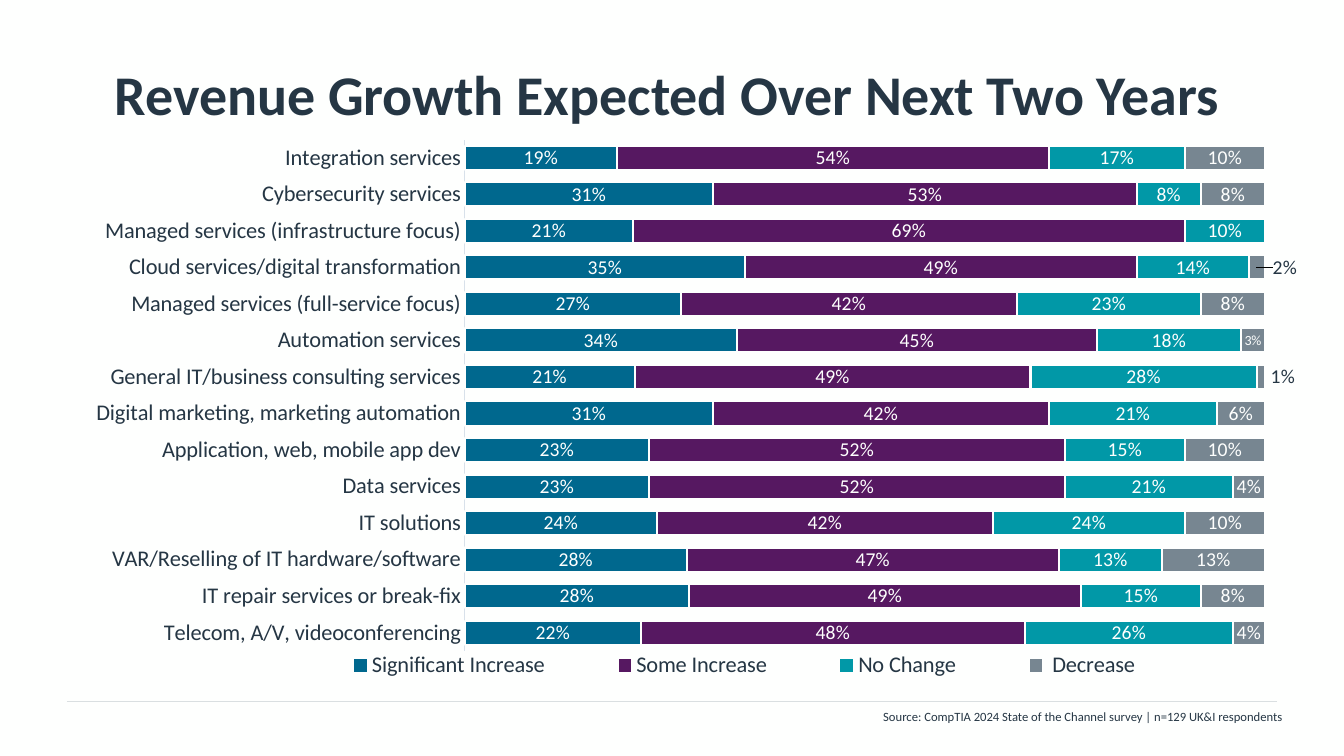
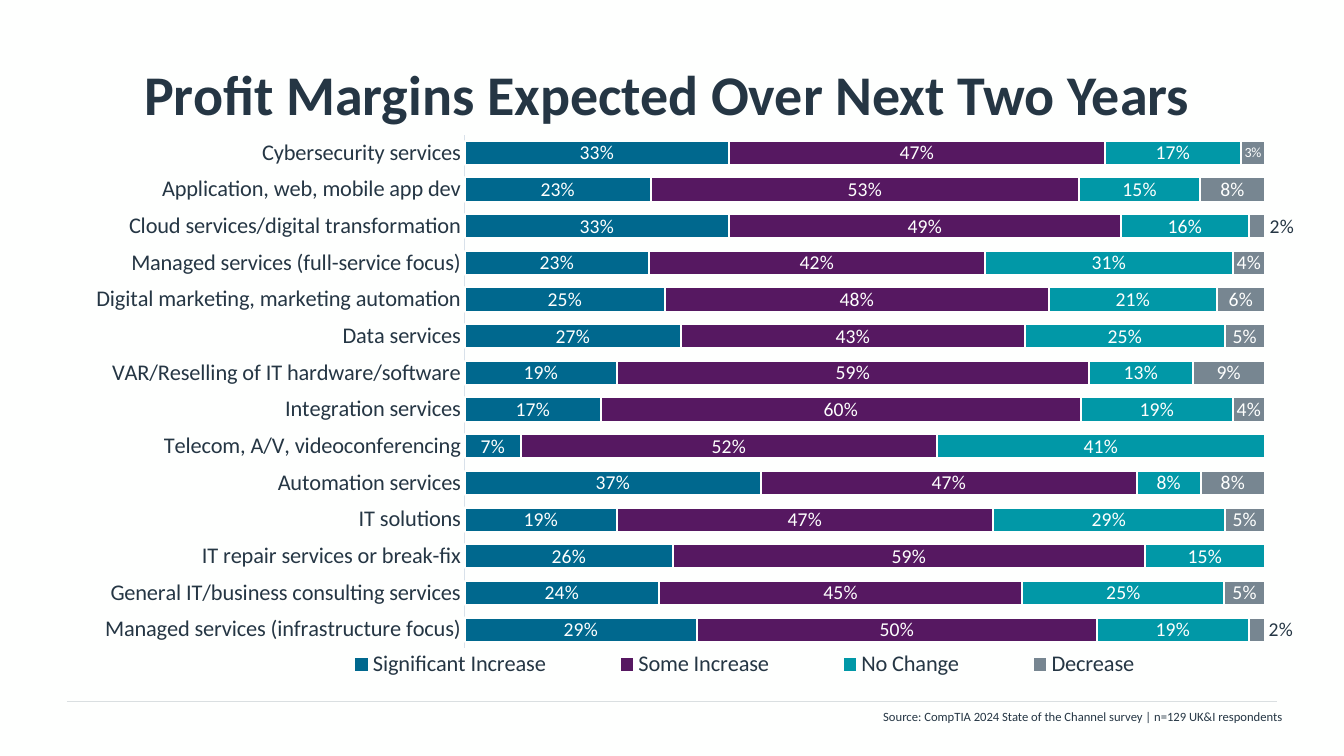
from dataclasses import dataclass
from typing import Any, NamedTuple

from lxml import etree
from pptx import Presentation
from pptx import util as u
from pptx.chart import data as chart_data
from pptx.dml import color
from pptx.enum import chart as charts, shapes, text
from pptx.oxml import ns

EMU_PER_PX = 914400 / 100.8
FONT = "Calibri"
INK, PAPER, RULE, AXIS = "253644", "FEFFFE", "DADFE1", "D8E1EA"
SERIES_COLORS = ("00688E", "561861", "0198A7", "778691")
SOURCE = "Source: CompTIA 2024 State of the Channel survey | n=129 UK&I respondents"


class Box(NamedTuple):
    left: int
    top: int
    width: int
    height: int


TITLE_BOX = Box(67, 30, 1210, 126)
SOURCE_BOX = Box(638, 704, 654, 25)
LEGEND_BOX = Box(288, 652, 913, 30)
RULE_LEFT, RULE_RIGHT, RULE_TOP = 67, 1277, 701


@dataclass(frozen=True)
class Page:
    """Rows run from top to bottom; label_shifts are px to the right."""
    title: str
    chart_box: Box
    plot_height: int
    series_names: tuple[str, ...]
    rows: dict[str, tuple[int, ...]]
    label_shifts: dict[str, int]


PAGES = (
    Page(
        "Revenue Growth Expected Over Next Two Years",
        Box(67, 139, 1246, 549),
        512,
        ("Significant Increase", "Some Increase", "No Change", " Decrease"),
        {
            "Integration services": (19, 54, 17, 10),
            "Cybersecurity services": (31, 53, 8, 8),
            "Managed services (infrastructure focus)": (21, 69, 10, 0),
            "Cloud services/digital transformation": (35, 49, 14, 2),
            "Managed services (full-service focus)": (27, 42, 23, 8),
            "Automation services": (34, 45, 18, 3),
            "General IT/business consulting services": (21, 49, 28, 1),
            "Digital marketing, marketing automation": (31, 42, 21, 6),
            "Application, web, mobile app dev": (23, 52, 15, 10),
            "Data services": (23, 52, 21, 4),
            "IT solutions": (24, 42, 24, 10),
            "VAR/Reselling of IT hardware/software": (28, 47, 13, 13),
            "IT repair services or break-fix": (28, 49, 15, 8),
            "Telecom, A/V, videoconferencing": (22, 48, 26, 4),
        },
        {"Cloud services/digital transformation": 28,
         "General IT/business consulting services": 22},
    ),
    Page(
        "Profit Margins Expected Over Next Two Years",
        Box(67, 134, 1246, 553),
        514,
        ("Significant Increase", "Some Increase", "No Change", "Decrease"),
        {
            "Cybersecurity services": (33, 47, 17, 3),
            "Application, web, mobile app dev": (23, 53, 15, 8),
            "Cloud services/digital transformation": (33, 49, 16, 2),
            "Managed services (full-service focus)": (23, 42, 31, 4),
            "Digital marketing, marketing automation": (25, 48, 21, 6),
            "Data services": (27, 43, 25, 5),
            "VAR/Reselling of IT hardware/software": (19, 59, 13, 9),
            "Integration services": (17, 60, 19, 4),
            "Telecom, A/V, videoconferencing": (7, 52, 41, 0),
            "Automation services": (37, 47, 8, 8),
            "IT solutions": (19, 47, 29, 5),
            "IT repair services or break-fix": (26, 59, 15, 0),
            "General IT/business consulting services": (24, 45, 25, 5),
            "Managed services (infrastructure focus)": (29, 50, 19, 2),
        },
        {"Cloud services/digital transformation": 25,
         "Managed services (infrastructure focus)": 24},
    ),
)


def px(length: int) -> u.Emu:
    return u.Emu(round(length * EMU_PER_PX))


def rgb(value: str) -> color.RGBColor:
    return color.RGBColor.from_string(value)


def assign(target: Any, values: dict[str, Any]) -> None:
    for name, value in values.items():
        setattr(target, name, value)


def set_font(font: Any, size: int, hex_color: str = INK, bold: bool = False) -> None:
    assign(font, {"name": FONT, "size": u.Pt(size), "bold": bold})
    font.color.rgb = rgb(hex_color)


def set_line(line: Any, hex_color: str, width: float) -> None:
    line.color.rgb = rgb(hex_color)
    line.width = u.Pt(width)


def write_text(shape: Any, content: str, size: int, frame_format: dict[str, Any],
               alignment: text.PP_ALIGN, bold: bool = False) -> None:
    frame = shape.text_frame
    frame.text = content
    assign(frame, {"word_wrap": True} | frame_format)
    paragraph = frame.paragraphs[0]
    paragraph.alignment = alignment
    set_font(paragraph.runs[0].font, size, bold=bold)


def add_title(slide: Any, title: str) -> None:
    shape = slide.shapes.title
    assign(shape, {name: px(value) for name, value in TITLE_BOX._asdict().items()})
    frame_format = {
        "auto_size": text.MSO_AUTO_SIZE.NONE,
        "vertical_anchor": text.MSO_ANCHOR.MIDDLE,
        "margin_left": 0,
    }
    write_text(shape, title, 40, frame_format, text.PP_ALIGN.CENTER, bold=True)


def add_footer(slide: Any) -> None:
    rule = slide.shapes.add_connector(
        shapes.MSO_CONNECTOR.STRAIGHT,
        px(RULE_LEFT), px(RULE_TOP), px(RULE_RIGHT), px(RULE_TOP))
    set_line(rule.line, RULE, 0.5)
    etree.SubElement(rule.element.spPr, ns.qn("a:effectLst"))
    source = slide.shapes.add_textbox(*map(px, SOURCE_BOX))
    write_text(source, SOURCE, 9, {"auto_size": text.MSO_AUTO_SIZE.SHAPE_TO_FIT_TEXT},
               text.PP_ALIGN.RIGHT)


def set_layout(parent: Any, position: int, values: dict[str, Any]) -> None:
    """Replace the manual chart layout of parent, as its child at position."""
    for old_layout in parent.findall(ns.qn("c:layout")):
        parent.remove(old_layout)
    layout = etree.Element(ns.qn("c:layout"))
    manual = etree.SubElement(layout, ns.qn("c:manualLayout"))
    for name, value in values.items():
        etree.SubElement(manual, ns.qn(f"c:{name}"), val=str(value))
    parent.insert(position, layout)


def layout_values(box: Box, chart_box: Box) -> dict[str, Any]:
    return {
        "xMode": "edge",
        "yMode": "edge",
        "x": round((box.left - chart_box.left) / chart_box.width, 4),
        "y": round((box.top - chart_box.top) / chart_box.height, 4),
        "w": round(box.width / chart_box.width, 4),
        "h": round(box.height / chart_box.height, 4),
    }


def style_axes(chart: Any) -> None:
    category_axis, value_axis = chart.category_axis, chart.value_axis
    no_ticks = {"major_tick_mark": charts.XL_TICK_MARK.NONE,
                "minor_tick_mark": charts.XL_TICK_MARK.NONE,
                "has_major_gridlines": False}
    assign(category_axis, no_ticks)
    assign(value_axis, no_ticks | {
        "minimum_scale": 0, "maximum_scale": 1.02, "visible": False})
    set_font(category_axis.tick_labels.font, 16)
    set_line(category_axis.format.line, AXIS, 0.75)
    assign(value_axis.tick_labels, {"number_format": "0%",
                                    "number_format_is_linked": False})


def style_series(series: Any, hex_color: str) -> None:
    series.format.fill.solid()
    series.format.fill.fore_color.rgb = rgb(hex_color)
    set_line(series.format.line, PAPER, 1.5)
    labels = series.data_labels
    assign(labels, {
        "show_value": True,
        "number_format": "0%",
        "number_format_is_linked": False,
        "position": charts.XL_LABEL_POSITION.CENTER,
    })
    set_font(labels.font, 14, PAPER)


def fit_narrow_labels(series: Any, page: Page) -> None:
    """Hide zeros, shrink 3% labels and move smaller ones beside the bar."""
    for index, (category, values) in enumerate(reversed(page.rows.items())):
        percent = values[-1]
        if percent > 3:
            continue
        label = series.points[index].data_label
        label.position = charts.XL_LABEL_POSITION.CENTER
        shift = page.label_shifts.get(category)
        set_font(label.font, 14 if shift else 10, INK if shift else PAPER)
        element = series.data_labels._element.xpath(
            f'c:dLbl[c:idx/@val="{index}"]')[0]
        if percent == 0:
            for child in list(element)[1:]:
                element.remove(child)
            etree.SubElement(element, ns.qn("c:delete"), val="1")
        elif shift:
            set_layout(element, 1, {"x": round(shift / page.chart_box.width, 4), "y": 0})


def add_bar_chart(slide: Any, page: Page) -> None:
    rows = dict(reversed(page.rows.items()))
    data = chart_data.CategoryChartData(number_format="0%")
    data.categories = list(rows)
    for name, percents in zip(page.series_names, zip(*rows.values())):
        data.add_series(name, [percent / 100 for percent in percents])
    chart = slide.shapes.add_chart(
        charts.XL_CHART_TYPE.BAR_STACKED_100, *map(px, page.chart_box), data).chart
    assign(chart, {"has_title": False, "has_legend": True})
    set_font(chart.font, 10)
    assign(chart.plots[0], {"gap_width": 51, "overlap": 100, "vary_by_categories": False})
    style_axes(chart)
    for series, hex_color in zip(chart.plots[0].series, SERIES_COLORS):
        style_series(series, hex_color)
    fit_narrow_labels(chart.plots[0].series[-1], page)

    assign(chart.legend, {"position": charts.XL_LEGEND_POSITION.BOTTOM,
                          "include_in_layout": False})
    set_font(chart.legend.font, 16)
    plot_box = Box(465, page.chart_box.top, 816, page.plot_height)
    plot_area = chart.element.xpath("c:chart/c:plotArea")[0]
    legend = chart.element.xpath("c:chart/c:legend")[0]
    set_layout(plot_area, 0,
               {"layoutTarget": "inner"} | layout_values(plot_box, page.chart_box))
    set_layout(legend, 1, layout_values(LEGEND_BOX, page.chart_box))


def main() -> None:
    presentation = Presentation()
    assign(presentation, {"slide_width": px(1344), "slide_height": px(756)})
    background = presentation.slide_master.background.fill
    background.solid()
    background.fore_color.rgb = rgb(PAPER)
    title_only = presentation.slide_layouts.get_by_name("Title Only")
    for page in PAGES:
        slide = presentation.slides.add_slide(title_only)
        add_title(slide, page.title)
        add_bar_chart(slide, page)
        add_footer(slide)
    presentation.save("out.pptx")


if __name__ == "__main__":
    main()
